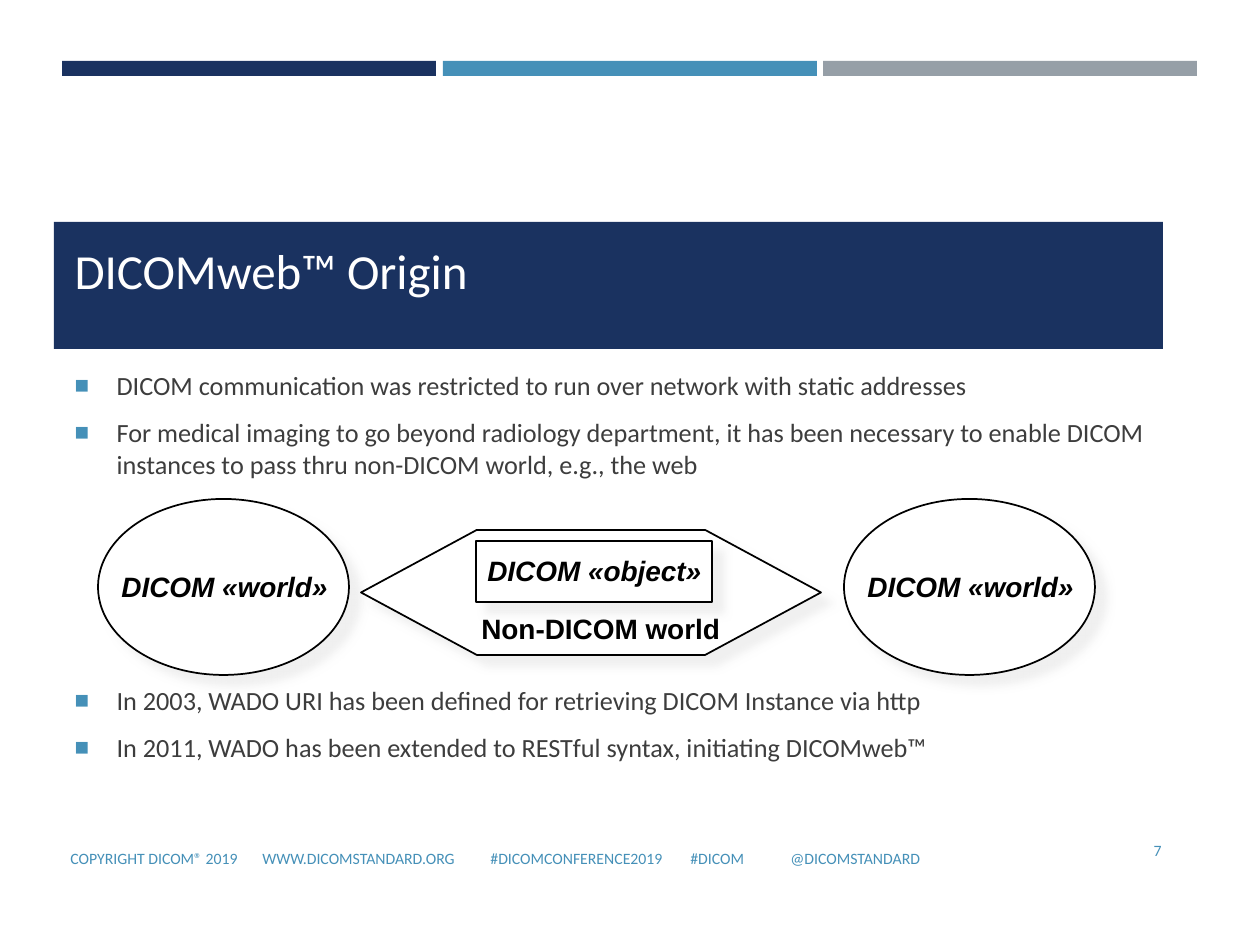
from dataclasses import dataclass
from typing import Any

from lxml import etree
from pptx import Presentation
from pptx.dml.color import RGBColor
from pptx.enum.shapes import MSO_SHAPE
from pptx.enum.text import MSO_ANCHOR, MSO_AUTO_SIZE, PP_ALIGN
from pptx.oxml.ns import qn
from pptx.util import Emu, Pt

RECTANGLE, ELLIPSE, HEXAGON = MSO_SHAPE.RECTANGLE, MSO_SHAPE.OVAL, MSO_SHAPE.HEXAGON
TOP, MIDDLE = MSO_ANCHOR.TOP, MSO_ANCHOR.MIDDLE
LEFT, RIGHT = PP_ALIGN.LEFT, PP_ALIGN.RIGHT
FIXED, GROW = MSO_AUTO_SIZE.NONE, MSO_AUTO_SIZE.SHAPE_TO_FIT_TEXT

NAVY = RGBColor(0x1A, 0x32, 0x60)
BLUE = RGBColor(0x45, 0x90, 0xB8)
GRAY = RGBColor(0x96, 0x9F, 0xA7)
CHARCOAL = RGBColor(0x3D, 0x3D, 0x3D)
SHADOW = RGBColor(0xEB, 0xEB, 0xEB)
BLACK = RGBColor(0, 0, 0)
WHITE = RGBColor(0xFF, 0xFF, 0xFF)

PX = 914400 / 126
BULLET_INDENT = 42
FOOTER_TABS = (192, 420, 620, 720)


@dataclass(frozen=True)
class Box:
    left: int
    top: int
    width: int
    height: int

    def emu(self) -> tuple[Emu, ...]:
        return tuple(px(value) for value in (self.left, self.top, self.width, self.height))


@dataclass(frozen=True)
class Figure:
    kind: Any
    outline: Box
    label: str
    label_box: Box
    italic: bool = True


@dataclass(frozen=True)
class Bullet:
    text: str
    space_before: float = 3


BARS = ((NAVY, 62), (BLUE, 443), (GRAY, 823))
TITLE_BAND = Box(54, 222, 1109, 127)
TITLE_BOX = Box(62, 234, 1101, 115)
BODY_BOX = Box(62, 363, 1113, 459)
FOOTER_BOX = Box(58, 834, 1066, 49)
NUMBER_BOX = Box(1120, 820, 54, 60)

BULLETS = (
    Bullet("DICOM communication was restricted to run over network with static addresses", 0),
    Bullet("For medical imaging to go beyond radiology department, it has been necessary "
           "to enable DICOM instances to pass thru non-DICOM world, e.g., the web"),
    Bullet("In 2003, WADO URI has been defined for retrieving DICOM Instance via http", 111),
    Bullet("In 2011, WADO has been extended to RESTful syntax, initiating DICOMweb™"),
)
FOOTER = ("COPYRIGHT DICOM® 2019", "WWW.DICOMSTANDARD.ORG", "#DICOMCONFERENCE2019",
          "#DICOM", "@DICOMSTANDARD")
WORLDS = tuple(
    Figure(ELLIPSE, Box(left, 499, 251, 176), "DICOM «world»", Box(left + 11, 563, 233, 47))
    for left in (98, 844)
)
FIGURES = WORLDS + (
    Figure(HEXAGON, Box(361, 530, 460, 125), "Non-DICOM world", Box(469, 605, 267, 47), False),
    Figure(RECTANGLE, Box(476, 541, 236, 61), "DICOM «object»", Box(475, 547, 241, 47)),
)


def px(value: float) -> Emu:
    return Emu(round(value * PX))


def place(shape: Any, box: Box) -> None:
    shape.left, shape.top, shape.width, shape.height = box.emu()


def set_up_frame(frame: Any, anchor: Any = TOP, wrap: bool = True, fit: Any = FIXED) -> None:
    frame.auto_size = fit
    frame.word_wrap = wrap
    frame.vertical_anchor = anchor


def write(para: Any, text: str, *, size: float, color: RGBColor, font: str = "Calibri",
          bold: bool = False, italic: bool = False, align: Any = LEFT) -> None:
    para.alignment = align
    span = para.add_run()
    span.text = text
    span.font.name = font
    span.font.size = Pt(size)
    span.font.bold = bold
    span.font.italic = italic
    span.font.color.rgb = color


def add_text_box(page: Any, box: Box, text: str, *, anchor: Any = TOP, wrap: bool = True,
                 fit: Any = FIXED, **style: Any) -> Any:
    frame = page.shapes.add_textbox(*box.emu()).text_frame
    set_up_frame(frame, anchor, wrap, fit)
    write(frame.paragraphs[0], text, **style)
    return frame.paragraphs[0]


def add_block(page: Any, kind: Any, box: Box, fill: RGBColor) -> Any:
    shape = page.shapes.add_shape(kind, *box.emu())
    shape.shadow.inherit = False
    shape.fill.solid()
    shape.fill.fore_color.rgb = fill
    shape.line.fill.background()
    return shape


def add_shadow(shape: Any) -> None:
    effects = shape.element.spPr.find(qn("a:effectLst"))
    shadow = etree.SubElement(effects, qn("a:outerShdw"), blurRad=str(Pt(5)),
                              dist=str(Pt(8.5)), dir="2700000", algn="ctr", rotWithShape="0")
    color = etree.SubElement(shadow, qn("a:srgbClr"), val=str(SHADOW))
    etree.SubElement(color, qn("a:alpha"), val="75000")


def add_figure(page: Any, figure: Figure) -> None:
    shape = add_block(page, figure.kind, figure.outline, WHITE)
    shape.line.color.rgb = BLACK
    shape.line.width = Pt(1)
    if figure.kind == HEXAGON:
        shape.adjustments[0] = 0.926
    add_shadow(shape)
    add_text_box(page, figure.label_box, figure.label, wrap=False, fit=GROW, size=16,
                 color=BLACK, font="Arial", bold=True, italic=figure.italic)


def add_bullet(para: Any, bullet: Bullet) -> None:
    properties = para._p.get_or_add_pPr()
    properties.set("marL", str(px(BULLET_INDENT)))
    properties.set("indent", str(-px(BULLET_INDENT)))
    color = etree.SubElement(properties, qn("a:buClr"))
    etree.SubElement(color, qn("a:srgbClr"), val=str(BLUE))
    etree.SubElement(properties, qn("a:buSzPct"), val="92000")
    etree.SubElement(properties, qn("a:buFont"), typeface="Arial")
    etree.SubElement(properties, qn("a:buChar"), char="■")
    para.space_before = Pt(bullet.space_before)
    para.space_after = Pt(6)
    write(para, bullet.text, size=15, color=CHARCOAL)


def add_tabs(para: Any, stops: tuple[int, ...]) -> None:
    tabs = etree.SubElement(para._p.get_or_add_pPr(), qn("a:tabLst"))
    for stop in stops:
        etree.SubElement(tabs, qn("a:tab"), pos=str(px(stop)), algn="l")


def main() -> None:
    deck = Presentation()
    deck.slide_width, deck.slide_height = px(1260), px(945)
    page = deck.slides.add_slide(deck.slide_layouts[1])
    title, body = page.placeholders[0], page.placeholders[1]

    for color, left in BARS:
        add_block(page, RECTANGLE, Box(left, 61, 374, 15), color)
    add_block(page, RECTANGLE, TITLE_BAND, NAVY)

    for placeholder, box in ((title, TITLE_BOX), (body, BODY_BOX)):
        place(placeholder, box)
        set_up_frame(placeholder.text_frame)
        placeholder.element.getparent().append(placeholder.element)
    write(title.text_frame.paragraphs[0], "DICOMweb™ Origin", size=28, color=WHITE)
    for index, bullet in enumerate(BULLETS):
        frame = body.text_frame
        add_bullet(frame.add_paragraph() if index else frame.paragraphs[0], bullet)

    footer = add_text_box(page, FOOTER_BOX, "\t".join(FOOTER), anchor=MIDDLE, size=9, color=BLUE)
    add_tabs(footer, FOOTER_TABS)
    add_text_box(page, NUMBER_BOX, "7", anchor=MIDDLE, size=9, color=BLUE, align=RIGHT)

    for figure in FIGURES:
        add_figure(page, figure)
    deck.save("out.pptx")


if __name__ == "__main__":
    main()
